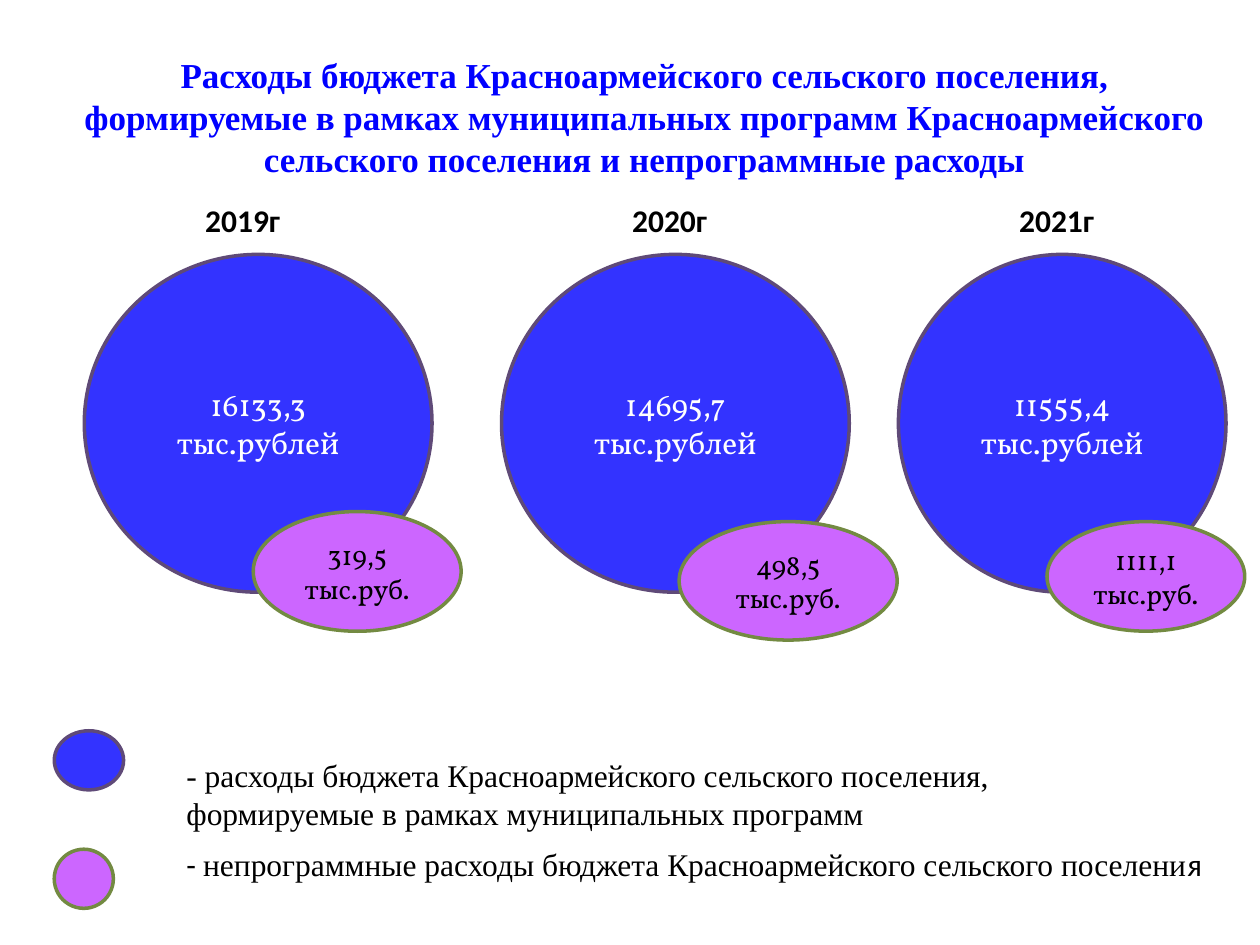
from pptx import Presentation
from pptx.dml.color import RGBColor
from pptx.enum.shapes import MSO_SHAPE
from pptx.enum.text import MSO_ANCHOR, PP_ALIGN
from pptx.util import Pt

ELLIPSE = MSO_SHAPE.OVAL
MIDDLE = MSO_ANCHOR.MIDDLE
CENTER = PP_ALIGN.CENTER
TITLE_ONLY = 5

SERIF, SANS, FIGURES = "Times New Roman", "Calibri", "Vollkorn"
BLACK, WHITE, TITLE_BLUE = "000000", "FFFFFF", "0000FF"
PROGRAM = ("3333FF", "5F4A78")
NON_PROGRAM = ("CC66FF", "738A42")

TITLE = ("Расходы бюджета Красноармейского сельского поселения, формируемые "
         "в рамках муниципальных программ Красноармейского сельского поселения "
         "и непрограммные расходы")

# Boxes are (left, top, width, height) in points.
YEARS = [
    ("2019г", (110.2, 111.6, 64, 28.8),
     "16133,3 тыс.рублей", (48.2, 145.4, 198.7, 193),
     "319,5 тыс.руб.", (144.7, 292.3, 118.8, 68.4)),
    ("2020г", (354.2, 111.6, 67.7, 28.8),
     "14695,7 тыс.рублей", (286.6, 145.4, 198.7, 193),
     "498,5 тыс.руб.", (388.1, 298.1, 124.6, 67.7)),
    ("2021г", (575.3, 111.6, 65.5, 28.8),
     "11555,4 тыс.рублей", (513.4, 145.4, 187.2, 193),
     "1111,1 тыс.руб.", (598.3, 298.1, 113, 62.6)),
]
LEGEND = [
    (PROGRAM, (31, 417.6, 39.6, 33.8), (99.4, 428.4, 572.4, 51.1),
     [("- расходы бюджета Красноармейского сельского поселения, "
       "формируемые в рамках муниципальных программ", SERIF)]),
    (NON_PROGRAM, (31, 485.3, 33.8, 33.8), (99.4, 479.5, 612.7, 28.8),
     [("- ", SANS),
      ("непрограммные расходы бюджета Красноармейского сельского поселени", SERIF),
      ("я", SANS)]),
]


def color(hex_string):
    return RGBColor.from_string(hex_string)


def in_points(box):
    return [Pt(length) for length in box]


def set_font(font, name, size, hex_string, bold=False):
    font.name, font.size, font.bold = name, Pt(size), bold
    font.color.rgb = color(hex_string)


def add_title(page, box):
    title = page.shapes.title
    title.left, title.top, title.width, title.height = in_points(box)
    title.text_frame.text = TITLE
    title.text_frame.vertical_anchor = MIDDLE
    para = title.text_frame.paragraphs[0]
    para.alignment = CENTER
    set_font(para.font, SERIF, 20, TITLE_BLUE, bold=True)


def add_ellipse(page, box, colors, text="", size=18, text_color=WHITE):
    ellipse = page.shapes.add_shape(ELLIPSE, *in_points(box))
    ellipse.shadow.inherit = False
    fill, line = colors
    ellipse.fill.solid()
    ellipse.fill.fore_color.rgb = color(fill)
    ellipse.line.color.rgb = color(line)
    ellipse.line.width = Pt(2)
    if text:
        frame = ellipse.text_frame
        frame.text = text
        frame.word_wrap = True
        frame.vertical_anchor = MIDDLE
        para = frame.paragraphs[0]
        para.alignment = CENTER
        set_font(para.font, FIGURES, size, text_color)


def add_label(page, box, spans, bold=False):
    """Add a one-paragraph text box from (text, font name) spans."""
    frame = page.shapes.add_textbox(*in_points(box)).text_frame
    frame.word_wrap = True
    para = frame.paragraphs[0]
    for text, font_name in spans:
        span = para.add_run()
        span.text = text
        set_font(span.font, font_name, 18, BLACK, bold)


def add_year(page, year, year_box, program, program_box, other, other_box):
    add_label(page, year_box, [(year, SANS)], bold=True)
    add_ellipse(page, program_box, PROGRAM, program)
    add_ellipse(page, other_box, NON_PROGRAM, other, 16, BLACK)


def add_legend_entry(page, colors, marker_box, label_box, spans):
    add_ellipse(page, marker_box, colors)
    add_label(page, label_box, spans)


def main():
    deck = Presentation()
    deck.slide_width, deck.slide_height = Pt(720), Pt(540)
    page = deck.slides.add_slide(deck.slide_layouts[TITLE_ONLY])
    add_title(page, (36, 21.6, 664.6, 90))
    for year in YEARS:
        add_year(page, *year)
    for entry in LEGEND:
        add_legend_entry(page, *entry)
    deck.save("out.pptx")


if __name__ == "__main__":
    main()
